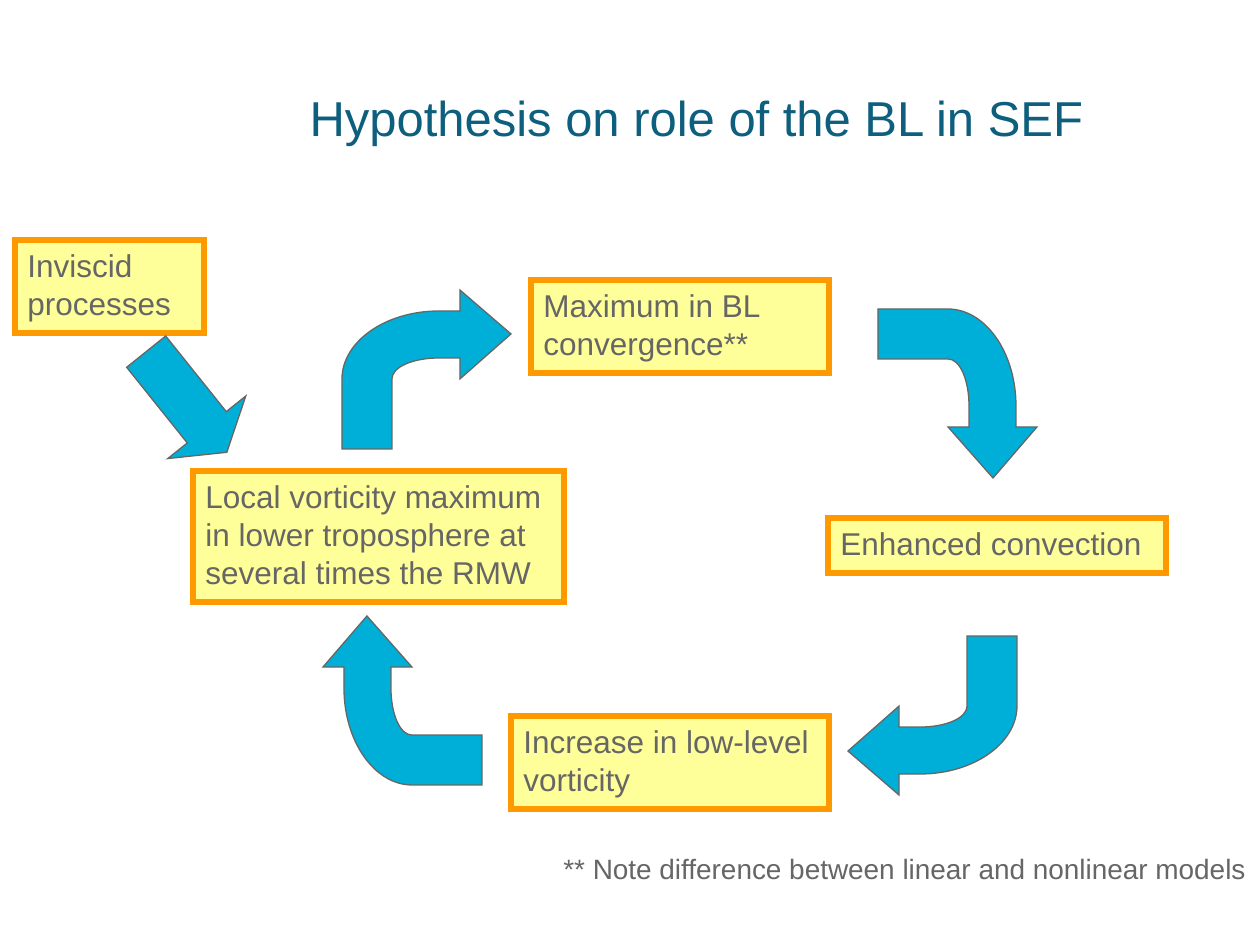
from lxml import etree
from pptx import Presentation
from pptx import util as u
from pptx.dml.color import RGBColor
from pptx.enum import shapes, text
from pptx.oxml import ns

PX = 914400 // 126
COLORS = {"title": "0E5F7E", "text": "666666", "box": "FFFF99",
          "border": "FF9900", "arrow": "00AFD7"}

TITLE = ("Hypothesis on role of the BL in SEF", (297, 38, 900, 157))
STAGES = [
    ("Local vorticity maximum in lower troposphere at several times the RMW",
     (193, 471, 371, 131)),
    ("Maximum in BL convergence**", (531, 280, 298, 93)),
    ("Enhanced convection", (828, 518, 338, 55)),
    ("Inviscid processes", (15, 240, 189, 93)),
    ("Increase in low-level vorticity", (511, 716, 318, 93)),
]
NOTE = ("** Note difference between linear and nonlinear models",
        (551, 845, 709, 47))
CYCLE_ARROWS = [((342, 290), 0), ((873, 314), 90),
                ((318, 621), 270), ((848, 636), 180)]
TRIGGER_ARROW = (122, 352, 129, 100)
BENT_OUTLINE = [(169, 44), (118, 0), (118, 21), (97, 21), (0, 89), (0, 159),
                (50, 159), (50, 89), (97, 68), (118, 68), (118, 89)]
BENDS = {(0, 89): [(43, 21), (0, 52)], (97, 68): [(50, 77), (71, 68)]}


def emu(box):
    return [u.Emu(n * PX) for n in box]


def rgb(name):
    return RGBColor.from_string(COLORS[name])


def paint(shape, fill, line, width):
    shape.shadow.inherit = False
    shape.fill.solid()
    shape.fill.fore_color.rgb = rgb(fill)
    shape.line.color.rgb = rgb(line)
    shape.line.width = u.Pt(width)
    outline = shape._element.spPr.find(ns.qn("a:ln"))
    etree.SubElement(outline, ns.qn("a:miter"), lim="800000")


def write(shape, words, size, color, anchor=text.MSO_ANCHOR.TOP, wrap=True,
          fit=text.MSO_AUTO_SIZE.SHAPE_TO_FIT_TEXT):
    frame = shape.text_frame
    frame.text = words
    frame.word_wrap = wrap
    frame.auto_size = fit
    frame.vertical_anchor = anchor
    paragraph = frame.paragraphs[0]
    paragraph.alignment = text.PP_ALIGN.LEFT
    paragraph.font.name = "Arial"
    paragraph.font.size = u.Pt(size)
    paragraph.font.color.rgb = rgb(color)


def round_bends(shape):
    for segment in list(shape._element.iter(ns.qn("a:lnTo"))):
        end = segment[0]
        controls = BENDS.get((int(end.get("x")), int(end.get("y"))))
        if controls:
            segment.tag = ns.qn("a:cubicBezTo")
            for index, (x, y) in enumerate(controls):
                segment.insert(index, etree.Element(ns.qn("a:pt"), x=str(x), y=str(y)))


deck = Presentation()
deck.slide_width, deck.slide_height = emu((1260, 945))
slide = deck.slides.add_slide(deck.slide_layouts[5])

words, box = TITLE
title = slide.shapes.title
title.left, title.top, title.width, title.height = emu(box)
write(title, words, 28, "title", text.MSO_ANCHOR.MIDDLE,
      fit=text.MSO_AUTO_SIZE.NONE)

for words, box in STAGES:
    stage = slide.shapes.add_shape(shapes.MSO_SHAPE.RECTANGLE, *emu(box))
    paint(stage, "box", "border", 3)
    write(stage, words, 18, "text")

for corner, angle in CYCLE_ARROWS:
    builder = slide.shapes.build_freeform(*BENT_OUTLINE[0], scale=PX)
    builder.add_line_segments(BENT_OUTLINE[1:], close=True)
    bent = builder.convert_to_shape(*emu(corner))
    round_bends(bent)
    bent.rotation = angle
    paint(bent, "arrow", "text", 0.75)

trigger = slide.shapes.add_shape(shapes.MSO_SHAPE.RIGHT_ARROW, *emu(TRIGGER_ARROW))
trigger.adjustments[0] = 0.5
trigger.adjustments[1] = 0.32
trigger.rotation = 51.3
paint(trigger, "arrow", "text", 0.75)

words, box = NOTE
write(slide.shapes.add_textbox(*emu(box)), words, 16, "text", wrap=False)

deck.save("out.pptx")
